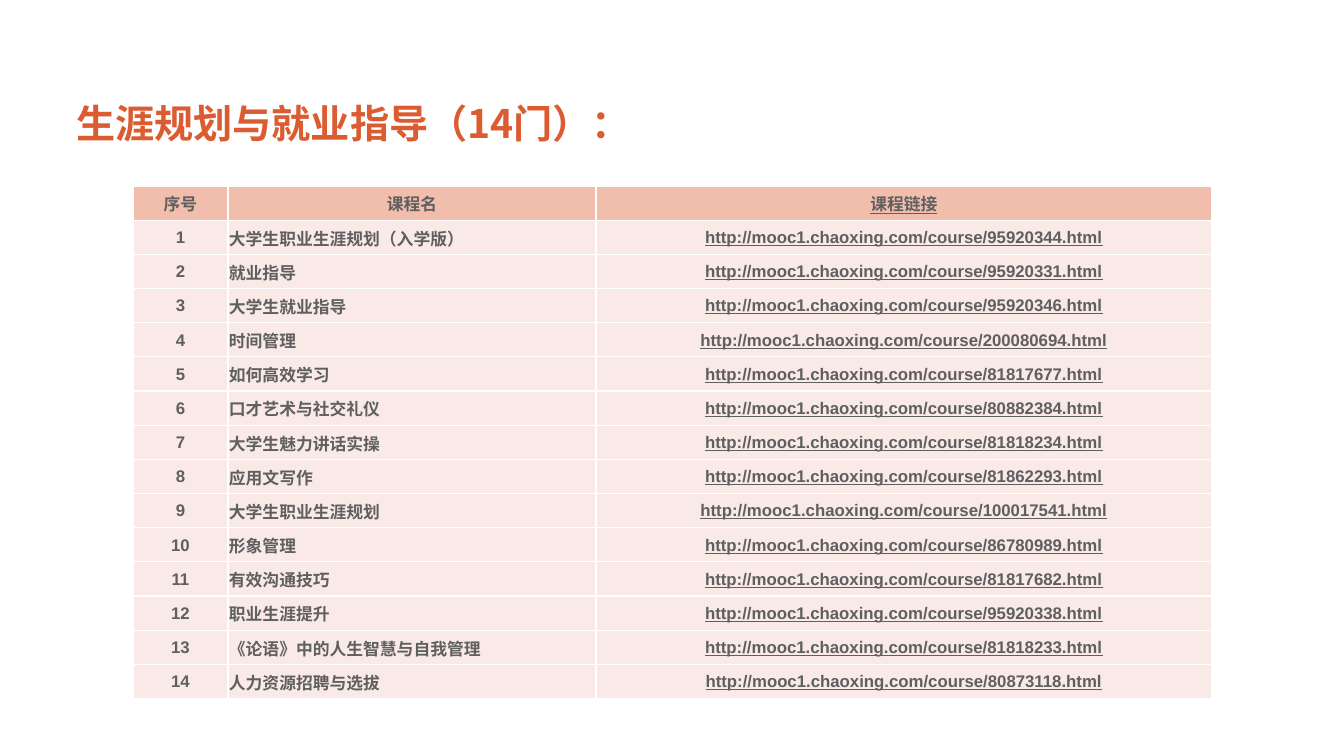
from lxml import etree
from pptx import Presentation, util as u
from pptx.dml.color import RGBColor
from pptx.enum import text
from pptx.oxml import ns

PX = 914400 / 100.8
TITLE_FONT, TABLE_FONT = "Noto Sans CJK SC", "Arial"
ORANGE, GREY, HEADER_FILL, ROW_FILL, WHITE = "DC5C31", "5F5F5F", "F1BEAD", "F9EAE8", "FFFFFF"
LINK = "http://mooc1.chaoxing.com/course/{}.html"
COLUMN_WIDTHS = (95, 368, 616)
HEADERS = ("序号", "课程名", "课程链接")
COURSES = [
    ("大学生职业生涯规划（入学版）", 95920344),
    ("就业指导", 95920331),
    ("大学生就业指导", 95920346),
    ("时间管理", 200080694),
    ("如何高效学习", 81817677),
    ("口才艺术与社交礼仪", 80882384),
    ("大学生魅力讲话实操", 81818234),
    ("应用文写作", 81862293),
    ("大学生职业生涯规划", 100017541),
    ("形象管理", 86780989),
    ("有效沟通技巧", 81817682),
    ("职业生涯提升", 95920338),
    ("《论语》中的人生智慧与自我管理", 81818233),
    ("人力资源招聘与选拔", 80873118),
]


def px(length):
    return u.Emu(round(length * PX))


def colour(value):
    return RGBColor.from_string(value)


def set_values(target, values):
    for name, value in values.items():
        setattr(target, name, value)


def write(frame, words, align, ink, **font_values):
    """Fill the frame with one paragraph holding one formatted span."""
    para = frame.paragraphs[0]
    para.alignment = align
    span = para.add_run()
    span.text = words
    set_values(span.font, {"bold": True, **font_values})
    span.font.color.rgb = colour(ink)
    east_asian = etree.SubElement(span.font._element, ns.qn("a:ea"))
    east_asian.set("typeface", TITLE_FONT)
    return para


def add_title(page, words):
    title = page.shapes.title
    set_values(title, {"left": px(66), "top": px(74), "width": px(1200), "height": px(78)})
    set_values(title.text_frame, {"word_wrap": True, "auto_size": text.MSO_AUTO_SIZE.NONE,
                                  "vertical_anchor": text.MSO_ANCHOR.BOTTOM})
    para = write(title.text_frame, words, text.PP_ALIGN.LEFT, ORANGE,
                 name=TITLE_FONT, size=u.Pt(28))
    para.line_spacing = 0.9


def add_borders(cell):
    properties = cell._tc.get_or_add_tcPr()
    for side in ("lnL", "lnR", "lnT", "lnB"):
        line = etree.SubElement(properties, ns.qn(f"a:{side}"), w=str(u.Pt(1)))
        fill = etree.SubElement(line, ns.qn("a:solidFill"))
        etree.SubElement(fill, ns.qn("a:srgbClr"), val=WHITE)


def fill_cell(cell, words, fill, centred, underlined):
    add_borders(cell)
    cell.fill.solid()
    cell.fill.fore_color.rgb = colour(fill)
    set_values(cell, {"margin_left": px(1), "margin_top": px(1), "margin_right": px(1),
                      "margin_bottom": 0, "vertical_anchor": text.MSO_ANCHOR.MIDDLE})
    align = text.PP_ALIGN.CENTER if centred else text.PP_ALIGN.LEFT
    write(cell.text_frame, words, align, GREY,
          name=TABLE_FONT, size=u.Pt(12), underline=underlined)


def add_course_table(page):
    rows = [HEADERS]
    rows += [(str(number), name, LINK.format(course))
             for number, (name, course) in enumerate(COURSES, 1)]
    table = page.shapes.add_table(len(rows), len(HEADERS), px(133), px(186),
                                  px(sum(COLUMN_WIDTHS)), px(513)).table
    for column, width in zip(table.columns, COLUMN_WIDTHS):
        column.width = px(width)
    for row_index, row in enumerate(rows):
        is_header = row_index == 0
        for column_index, words in enumerate(row):
            fill_cell(table.cell(row_index, column_index), words,
                      HEADER_FILL if is_header else ROW_FILL,
                      centred=is_header or column_index != 1,
                      underlined=column_index == 2)


def main():
    deck = Presentation()
    set_values(deck, {"slide_width": px(1344), "slide_height": px(756)})
    page = deck.slides.add_slide(deck.slide_layouts[5])
    add_title(page, "生涯规划与就业指导（14门）：")
    add_course_table(page)
    deck.save("out.pptx")


if __name__ == "__main__":
    main()
